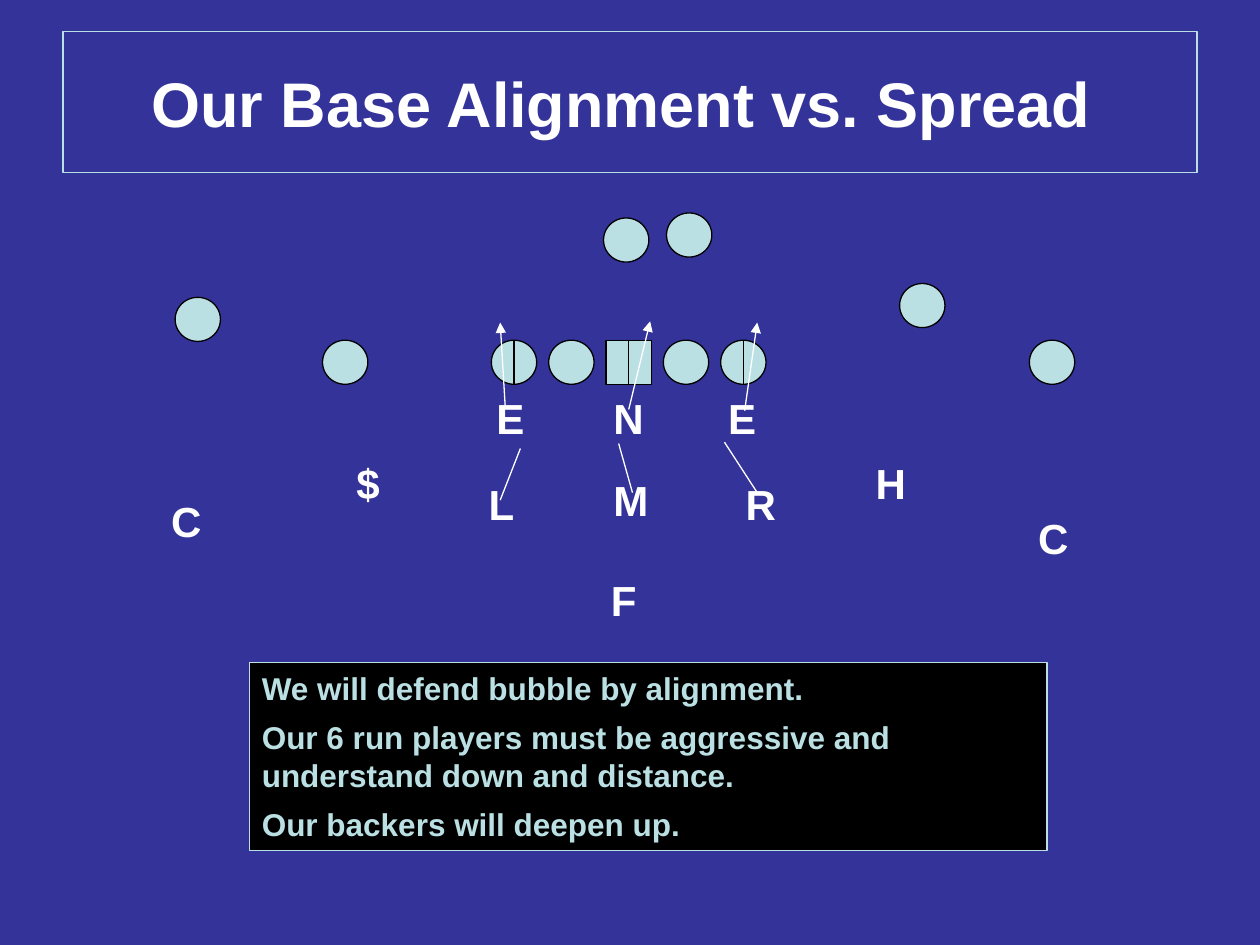
import lxml.etree
import pptx
import pptx.util
import pptx.dml.color
import pptx.oxml.ns
import pptx.enum.shapes
import pptx.enum.text

INK = {"field": "333399", "pale": "BBE0E3", "black": "000000", "white": "FFFFFF"}
FONT = "Arial"
WIDE, HIGH = 10, 7.5

TITLE = "Our Base Alignment vs. Spread "
NOTES = [
    "We will defend bubble by alignment.",
    "Our 6 run players must be aggressive and understand down and distance.",
    "Our backers will deepen up.",
]

# Offense: the line is evenly spaced around the center
MID, STEP, ROW = 4.99, 0.455, 2.7
SIZE = (0.36, 0.35)
SPLIT = (-2, 2)  # linemen with a line through them
BACKS = [(5.29, 1.69), (4.79, 1.73), (1.39, 2.36), (7.14, 2.25),
         (2.56, ROW), (8.17, ROW)]

# Defense: letter, left, top
FRONT, DEEP = 3.07, 3.75
TEAM = [
    ("E", 3.84, FRONT), ("N", 4.77, FRONT), ("E", 5.68, FRONT),
    ("L", 3.78, DEEP), ("M", 4.77, 3.72), ("R", 5.82, DEEP),
    ("$", 2.73, 3.58), ("H", 6.85, 3.58),
    ("C", 1.26, 3.88), ("C", 8.14, 4.02), ("F", 4.75, 4.51),
]
RUSH = [((4.01, 3.23), (3.97, 2.56)), ((4.99, 3.25), (5.16, 2.55)),
        ((5.91, 3.26), (6.01, 2.56))]
FILL = [((3.97, 3.97), (4.13, 3.56)), ((5.02, 3.91), (4.91, 3.52)),
        ((6.01, 3.91), (5.75, 3.51))]

KIND = pptx.enum.shapes.MSO_SHAPE
ANCHOR = pptx.enum.text.MSO_ANCHOR
ALIGN = pptx.enum.text.PP_ALIGN
inch = pptx.util.Inches
tag = pptx.oxml.ns.qn

deck = pptx.Presentation()
deck.slide_width, deck.slide_height = inch(WIDE), inch(HIGH)
slide = deck.slides.add_slide(deck.slide_layouts[6])


def color(name):
    return pptx.dml.color.RGBColor.from_string(INK[name])


def shape(kind, x, y, w, h, fill, edge):
    item = slide.shapes.add_shape(kind, inch(x), inch(y), inch(w), inch(h))
    item.shadow.inherit = False
    item.fill.solid()
    item.fill.fore_color.rgb = color(fill)
    item.line.color.rgb = color(edge)
    item.line.width = pptx.util.Pt(0.75)
    return item


def write(item, *lines, size, ink="white", align=ALIGN.LEFT, anchor=ANCHOR.TOP, gap=0):
    frame = item.text_frame
    frame.word_wrap = True
    frame.vertical_anchor = anchor
    for i, line in enumerate(lines):
        para = frame.add_paragraph() if i else frame.paragraphs[0]
        para.alignment = align
        if i:
            para.space_before = pptx.util.Pt(gap)
        run = para.add_run()
        run.text = line
        run.font.name = FONT
        run.font.size = pptx.util.Pt(size)
        run.font.bold = True
        run.font.color.rgb = color(ink)


def stroke(start, end, ink, arrow=False):
    line = slide.shapes.add_connector(
        pptx.enum.shapes.MSO_CONNECTOR.STRAIGHT, *map(inch, start + end))
    line.line.color.rgb = color(ink)
    line.line.width = pptx.util.Pt(0.75)
    props = line._element.find(tag("p:spPr"))
    if arrow:
        lxml.etree.SubElement(props.find(tag("a:ln")), tag("a:tailEnd"), type="triangle")
    lxml.etree.SubElement(props, tag("a:effectLst"))
    return line


back = slide.background.fill
back.solid()
back.fore_color.rgb = color("field")

head = shape(KIND.RECTANGLE, 0.5, 0.25, 9, 1.12, "field", "pale")
write(head, TITLE, size=36, align=ALIGN.CENTER, anchor=ANCHOR.MIDDLE)

for n in range(-2, 3):
    x = MID + n * STEP
    kind = KIND.OVAL if n else KIND.RECTANGLE
    man = shape(kind, x - SIZE[0] / 2, ROW, *SIZE, "pale", "black")
    if n in SPLIT or n == 0:
        seam = stroke((x, ROW + SIZE[1]), (x, ROW), "black")
        if n == 0:
            seam.begin_connect(man, 2)
            seam.end_connect(man, 0)
for spot in BACKS:
    shape(KIND.OVAL, *spot, *SIZE, "pale", "black")

for mark, x, y in TEAM:
    box = slide.shapes.add_textbox(inch(x), inch(y), inch(0.45), inch(0.5))
    write(box, mark, size=24)
for start, end in RUSH:
    stroke(start, end, "white", arrow=True)
for start, end in FILL:
    stroke(start, end, "white")

panel = shape(KIND.RECTANGLE, 1.98, 5.26, 6.33, 1.49, "black", "pale")
write(panel, *NOTES, size=18, ink="pale", gap=6.5)

deck.save("out.pptx")
